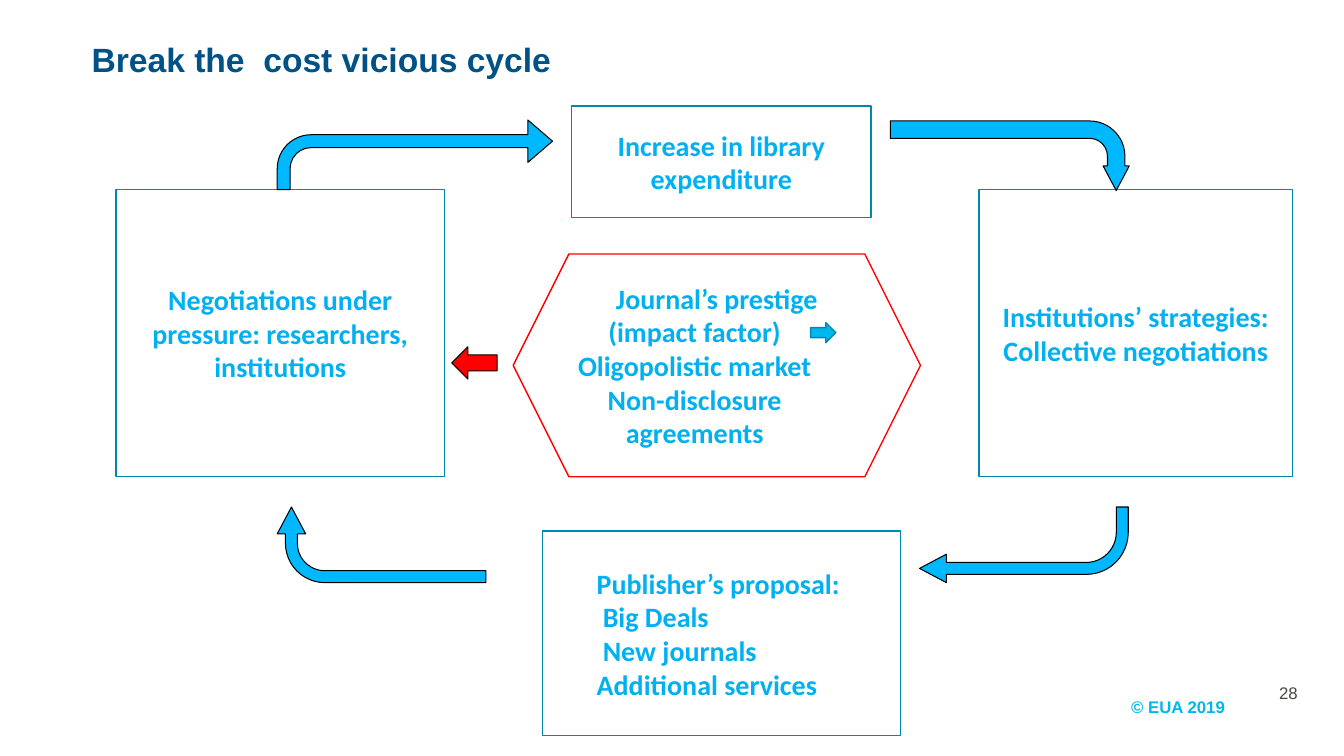
from pptx import Presentation
from pptx import util as u
from pptx.dml.color import RGBColor
from pptx.enum import shapes, text

COLOURS = {
    "white": "FFFFFF", "black": "000000", "navy": "005186", "border": "0087AF",
    "label": "00B0F0", "arrow": "00B8FF", "cyan": "00B6ED", "red": "FF0000",
    "grey": "494842",
}
SHAPE = shapes.MSO_SHAPE
ALIGN = text.PP_ALIGN
ANCHOR = text.MSO_ANCHOR


def colour(name):
    return RGBColor.from_string(COLOURS[name])


def write(box, lines, size, font, ink, bold=True, align=ALIGN.CENTER, anchor=ANCHOR.MIDDLE):
    frame = box.text_frame
    frame.word_wrap = True
    frame.vertical_anchor = anchor
    frame.text = "\n".join(lines)
    for para in frame.paragraphs:
        para.alignment = align
        for span in para.runs:
            span.font.size = u.Pt(size)
            span.font.name = font
            span.font.bold = bold
            span.font.color.rgb = colour(ink)
    return frame.paragraphs


def add_label(page, area, line, size, ink, **style):
    box = page.shapes.add_textbox(*map(u.Inches, area))
    return write(box, [line], size, "Arial", ink, **style)


def add_figure(page, kind, area, fill, line, width, rotation=0, adjustments=()):
    figure = page.shapes.add_shape(kind, *map(u.Inches, area))
    figure.shadow.inherit = False
    figure.fill.solid()
    figure.fill.fore_color.rgb = colour(fill)
    figure.line.color.rgb = colour(line)
    figure.line.width = u.Pt(width)
    figure.rotation = rotation
    for index, value in enumerate(adjustments):
        figure.adjustments[index] = value
    return figure


def add_stage(page, area, lines, align=ALIGN.CENTER):
    stage = add_figure(page, SHAPE.RECTANGLE, area, "white", "border", 1)
    return write(stage, lines, 20, "Calibri", "label", align=align)


def add_stages(page):
    add_stage(page, (1.15, 1.88, 3.26, 2.85),
              ["Negotiations under pressure: researchers, institutions"])
    add_stage(page, (5.67, 1.05, 2.97, 1.11), ["Increase in library expenditure"])
    add_stage(page, (9.71, 1.88, 3.11, 2.85),
              ["Institutions’ strategies: Collective negotiations"])
    proposal = add_stage(
        page, (5.38, 5.27, 3.55, 2.03),
        ["Publisher’s proposal:", "Big Deals", "New journals", "Additional services"],
        ALIGN.LEFT)
    for para, indent in zip(proposal, (0.44, 0.5, 0.5, 0.44)):
        para._p.get_or_add_pPr().set("marL", str(u.Inches(indent)))


def add_core(page, area):
    left, top, width, height = area
    core = add_figure(page, SHAPE.HEXAGON, area, "white", "red", 1)
    paras = write(core, ["Journal’s prestige", "(impact factor)", "Oligopolistic market",
                         "Non-disclosure agreements"], 20, "Calibri", "label")
    paras[1]._p.get_or_add_pPr().set("marR", str(u.Inches(0.44)))
    add_figure(page, SHAPE.RIGHT_ARROW, (left + 2.95, top + 0.68, 0.25, 0.2),
               "cyan", "border", 1)
    add_figure(page, SHAPE.LEFT_ARROW, (left - 0.61, top + 0.92, 0.45, 0.32),
               "red", "black", 0.75)


def add_cycle_arrows(page):
    arrows = [
        ((2.75, 1.19, 2.73, 0.69), 0, (0.185, 0.305, 0.354, 0.487)),
        ((9.67, 0.36, 0.69, 2.37), 90, (0.25, 0.188, 0.354, 0.508)),
        ((3.41, 4.37, 0.75, 2.07), 270, (0.158, 0.188, 0.354, 0.52)),
        ((9.12, 5.03, 2.07, 0.75), 180, (0.158, 0.188, 0.354, 0.557)),
    ]
    for area, rotation, adjustments in arrows:
        add_figure(page, SHAPE.BENT_ARROW, area, "arrow", "black", 0.75,
                   rotation, adjustments)


def add_footer(page):
    add_label(page, (11.12, 6.81, 1.13, 0.4), "© EUA 2019", 12, "cyan", align=ALIGN.LEFT)
    add_label(page, (12.37, 6.67, 0.6, 0.4), "28", 12, "grey", bold=False, align=ALIGN.RIGHT)


def main():
    deck = Presentation()
    deck.slide_width = u.Inches(13.33)
    deck.slide_height = u.Inches(7.5)
    page = deck.slides.add_slide(deck.slide_layouts[6])
    add_footer(page)
    title = add_label(page, (0.81, 0.44, 7.96, 0.4), "Break the  cost vicious cycle",
                      24, "navy", align=ALIGN.LEFT, anchor=ANCHOR.BOTTOM)
    title[0].line_spacing = 0.9
    add_stages(page)
    add_core(page, (5.09, 2.52, 4.04, 2.21))
    add_cycle_arrows(page)
    deck.save("out.pptx")


if __name__ == "__main__":
    main()
